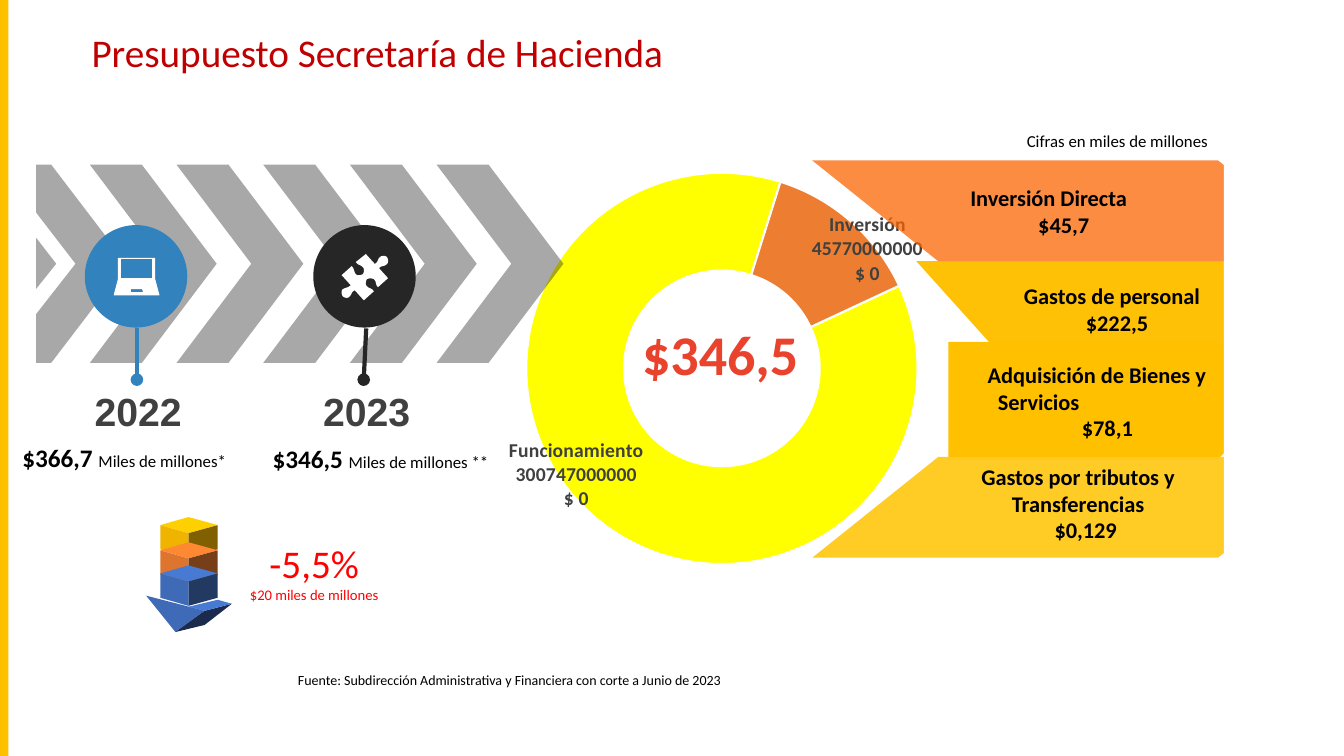
from dataclasses import dataclass

import pptx
import pptx.chart.data
import pptx.dml.color
import pptx.enum.chart
import pptx.enum.shapes
import pptx.enum.text
import pptx.oxml
import pptx.oxml.ns
import pptx.oxml.xmlchemy
import pptx.util

RGBColor = pptx.dml.color.RGBColor
Shapes = pptx.enum.shapes.MSO_SHAPE
Align = pptx.enum.text.PP_ALIGN
Anchor = pptx.enum.text.MSO_ANCHOR
qn = pptx.oxml.ns.qn
new_element = pptx.oxml.xmlchemy.OxmlElement

BLACK, WHITE = RGBColor(0, 0, 0), RGBColor(255, 255, 255)
CHARCOAL, GREY = RGBColor(0x26, 0x26, 0x26), RGBColor(0x40, 0x40, 0x40)
GOLD, LIGHT_GOLD = RGBColor(0xFF, 0xC0, 0), RGBColor(0xFF, 0xCA, 0x21)
ORANGE, VIVID_ORANGE = RGBColor(0xED, 0x7D, 0x31), RGBColor(0xFA, 0x65, 0)
YELLOW, BLUE = RGBColor(255, 255, 0), RGBColor(0x32, 0x82, 0xBE)
RED, DARK_RED, TOTAL_RED = RGBColor(255, 0, 0), RGBColor(0xC0, 0, 0), RGBColor(0xE9, 0x42, 0x2D)

# The slide is a grid of 160 columns by 90 rows; icons use hundredths of 12 cells
CELL = pptx.util.Inches(1) / 12
ICON_UNIT = CELL * 12 / 100

Point = tuple[float, float]


@dataclass
class Area:
    column: float
    row: float
    columns: float
    rows: float

    def emu(self) -> list[int]:
        return [round(n * CELL) for n in (self.column, self.row, self.columns, self.rows)]


@dataclass
class Span:
    text: str
    size: float
    bold: bool = False
    color: RGBColor = BLACK
    font: str = "Calibri"


@dataclass
class Line:
    spans: list[Span]
    align: Align = Align.CENTER
    margin: float = 0  # cells
    indent: float = 0  # cells


@dataclass
class Band:
    kind: Shapes
    area: Area
    color: RGBColor
    opacity: int
    adjust: float
    flipped: bool
    right_inset: float
    lines: list[Line]


@dataclass
class Year:
    name: str
    color: RGBColor
    circle_column: float
    stem: tuple[Point, Point]
    name_column: float
    amount_area: Area
    amount: str
    note: str


def paint(shape, color: RGBColor, opacity: int = 100) -> None:
    shape.shadow.inherit = False
    shape.fill.solid()
    shape.fill.fore_color.rgb = color
    shape.line.fill.background()
    if opacity < 100:
        alpha = new_element("a:alpha")
        alpha.set("val", str(opacity * 1000))
        shape._element.spPr.find(qn("a:solidFill")).find(qn("a:srgbClr")).append(alpha)


def write(frame, lines: list[Line], anchor: Anchor = Anchor.TOP) -> None:
    frame.word_wrap = True
    frame.vertical_anchor = anchor
    for number, line in enumerate(lines):
        para = frame.add_paragraph() if number else frame.paragraphs[0]
        para.alignment = line.align
        properties = para._p.get_or_add_pPr()
        properties.set("marL", str(round(line.margin * CELL)))
        properties.set("indent", str(round(line.indent * CELL)))
        for span in line.spans:
            run = para.add_run()
            run.text = span.text
            run.font.size = pptx.util.Pt(span.size)
            run.font.bold = span.bold
            run.font.name = span.font
            run.font.color.rgb = span.color


def add_text(page, area: Area, lines: list[Line], anchor: Anchor = Anchor.TOP) -> None:
    write(page.shapes.add_textbox(*area.emu()).text_frame, lines, anchor)


def add_preset(page, kind: Shapes, area: Area, color: RGBColor, opacity: int = 100):
    shape = page.shapes.add_shape(kind, *area.emu())
    paint(shape, color, opacity)
    return shape


def add_outline(page, contours: list[list[Point]], color: RGBColor,
                unit: float = ICON_UNIT, opacity: int = 100) -> None:
    scaled = [[(x * 100, y * 100) for x, y in contour] for contour in contours]
    builder = page.shapes.build_freeform(*scaled[0][0], scale=unit / 100)
    for number, contour in enumerate(scaled):
        if number:
            builder.move_to(*contour[0])
        builder.add_line_segments(contour[1:], close=True)
    paint(builder.convert_to_shape(), color, opacity)


def trace(start: Point, pieces: list[list[Point]]) -> list[Point]:
    """Turn straight pieces (1 point) and Bezier pieces (3 points) into one outline."""
    points = [start]
    for piece in pieces:
        if len(piece) == 1:
            points.append(piece[0])
            continue
        a, (b, c, d) = points[-1], piece
        for t in (0.2, 0.4, 0.6, 0.8, 1):
            s = 1 - t
            points.append(tuple(s**3 * a[i] + 3 * s * s * t * b[i] + 3 * s * t * t * c[i]
                                + t**3 * d[i] for i in (0, 1)))
    return points


def add_budget_chart(page) -> None:
    data = pptx.chart.data.CategoryChartData()
    data.categories = ["Funcionamiento", "Inversión"]
    data.add_series("Series 1", [300747000000, 45770000000])
    chart = page.shapes.add_chart(pptx.enum.chart.XL_CHART_TYPE.DOUGHNUT,
                                  *Area(53.6, 17.9, 64.7, 53).emu(), data).chart
    chart.has_legend = chart.has_title = False
    chart.font.name, chart.font.size = "Calibri", pptx.util.Pt(10)
    chart.font.color.rgb = BLACK
    plot = chart.plots[0]
    plot.vary_by_categories = True
    plot._element.find(qn("c:firstSliceAng")).set("val", "65")
    plot._element.find(qn("c:holeSize")).set("val", "50")
    series = plot.series[0]
    for number, color in enumerate((YELLOW, ORANGE)):
        look = series.points[number].format
        look.fill.solid()
        look.fill.fore_color.rgb = color
        look.line.color.rgb = WHITE
        look.line.width = pptx.util.Pt(1.5)

    # Slice labels, moved from their default places
    style = ('<c:numFmt formatCode="&quot;$&quot;\\ #,##0,," sourceLinked="0"/><c:txPr><a:bodyPr/><a:p><a:pPr>'
             f'<a:defRPr sz="1400" b="1"><a:solidFill><a:srgbClr val="{GREY}"/></a:solidFill>'
             '<a:latin typeface="Calibri"/></a:defRPr></a:pPr><a:endParaRPr lang="es-CO"/></a:p></c:txPr>'
             '<c:showLegendKey val="0"/><c:showVal val="1"/><c:showCatName val="1"/><c:showSerName val="0"/>'
             '<c:showPercent val="1"/><c:showBubbleSize val="0"/><c:separator>\n</c:separator>')
    labels = "".join(
        f'<c:dLbl><c:idx val="{n}"/><c:layout><c:manualLayout><c:x val="{x}"/><c:y val="{y}"/>'
        f'</c:manualLayout></c:layout>{style}</c:dLbl>'
        for n, (x, y) in enumerate([(-0.09, -0.01), (0.09, -0.02)]))
    namespaces = pptx.oxml.ns.nsdecls("c", "a")
    series._element.find(qn("c:cat")).addprevious(
        pptx.oxml.parse_xml(f"<c:dLbls {namespaces}>{labels}{style}</c:dLbls>"))
    plot_area = plot._element.getparent()
    for old in plot_area.findall(qn("c:layout")):
        plot_area.remove(old)
    plot_area.insert(0, pptx.oxml.parse_xml(
        f'<c:layout {namespaces}><c:manualLayout><c:layoutTarget val="inner"/><c:xMode val="edge"/>'
        '<c:yMode val="edge"/><c:x val="0.14"/><c:y val="0.05"/><c:w val="0.72"/><c:h val="0.88"/>'
        '</c:manualLayout></c:layout>'))


def add_band(page, band: Band) -> None:
    shape = add_preset(page, band.kind, band.area, band.color, band.opacity)
    shape.adjustments[0] = band.adjust
    if band.flipped:
        shape._element.spPr.find(qn("a:xfrm")).set("flipH", "1")
    shape.text_frame.margin_right = round(band.right_inset * CELL)
    write(shape.text_frame, band.lines, Anchor.MIDDLE)


def add_year(page, year: Year) -> None:
    add_preset(page, Shapes.OVAL, Area(year.circle_column, 26.8, 12.2, 12.2), year.color)
    ends = [round(n * CELL) for point in year.stem for n in point]
    stem = page.shapes.add_connector(pptx.enum.shapes.MSO_CONNECTOR.STRAIGHT, *ends)
    stem.line.color.rgb = year.color
    stem.line.width = pptx.util.Pt(3)
    head = new_element("a:headEnd")
    head.set("type", "oval")
    stem._element.spPr.find(qn("a:ln")).append(head)
    stem._element.spPr.append(new_element("a:effectLst"))
    add_text(page, Area(year.name_column, 45.5, 18.7, 6.8),
             [Line([Span(year.name, 28, True, GREY, "Arial")])])
    add_text(page, year.amount_area,
             [Line([Span(year.amount + " ", 18, True), Span(year.note, 12)])])


def add_falling_arrow(page) -> None:
    add_outline(page, [[(145, 591), (203, 606), (174, 627)]], RGBColor(0x3F, 0x6A, 0xB7))
    add_outline(page, [[(203, 606), (230, 599), (203, 620), (174, 627)]], RGBColor(0x1B, 0x2B, 0x4D))
    add_outline(page, [[(187, 602), (216, 595), (230, 599), (203, 606)]], RGBColor(0x47, 0x7A, 0xD2))
    blocks = [(521, "FFD000", "F0B400", "806000"), (546, "FF8833", "DE752E", "773F19"),
              (569, "477AD2", "3F6AB7", "223962")]
    for y, top, left, right in blocks:
        faces = [([(159, y), (187, y - 8), (216, y), (187, y + 8)], top),
                 ([(159, y), (187, y + 8), (187, y + 32), (159, y + 24)], left),
                 ([(187, y + 8), (216, y), (216, y + 24), (187, y + 32)], right)]
        for corners, color in faces:
            add_outline(page, [corners], RGBColor.from_string(color))


def bold_line(text: str, margin: float = 0) -> Line:
    return Line([Span(text, 16, True)], margin=margin)


BANDS = [
    Band(Shapes.PENTAGON, Area(112.9, 40.7, 39, 14.1), GOLD, 100, 0.5, False, 1.2,
         [Line([Span("Adquisición de Bienes y Servicios", 16, True)], Align.LEFT, 4.7, -1.2),
          bold_line("$78,1", 2.4)]),
    Band(Shapes.PARALLELOGRAM, Area(109.1, 31.1, 47.8, 11.4), GOLD, 98, 0.9, True, 2.4,
         [bold_line("Gastos de personal"), bold_line("$222,5", 1.2)]),
    Band(Shapes.PARALLELOGRAM, Area(96.7, 54.4, 63.3, 12), LIGHT_GOLD, 98, 1.25, False, 1.2, []),
    Band(Shapes.PARALLELOGRAM, Area(96.7, 19.1, 63.3, 12), VIVID_ORANGE, 74, 1.25, True, 8.2,
         [bold_line("Inversión Directa"), bold_line("$45,7", 3.6)]),
]
YEARS = [
    Year("2023", CHARCOAL, 37.3, ((43.3, 45.2), (43.6, 39.1)), 34.3,
         Area(30.5, 52.2, 29.6, 4.8), "$346,5", "Miles de millones **"),
    Year("2022", BLUE, 10.1, ((16.3, 45.2), (16.3, 39.1)), 7.1,
         Area(1.1, 52.1, 27.4, 4.8), "$366,7", "Miles de millones*"),
]
LAPTOP = [
    [(130, 287), (130, 290), (142, 290), (141, 287)],
    [(120, 257), (120, 276), (151, 276), (151, 257)],
    [(117, 256), (154, 256), (154, 277), (158, 292), (158, 293), (113, 293), (113, 292), (117, 277)],
]
PUZZLE = trace((384, 255), [
    [(385, 257), (386, 260), (384, 262)], [(381, 265), (379, 263), (376, 266)], [(385, 276)],
    [(375, 285)], [(372, 282), (374, 280), (371, 277)], [(369, 276), (366, 276), (364, 277)],
    [(363, 279), (362, 282), (364, 284)], [(367, 287), (368, 285), (371, 289)], [(361, 298)],
    [(352, 288)], [(348, 290), (350, 291), (347, 294)], [(345, 297), (341, 295), (340, 294)],
    [(339, 292), (338, 289), (340, 287)], [(343, 285), (345, 286), (348, 283)], [(339, 273)],
    [(349, 264)], [(352, 267), (351, 270), (353, 272)], [(355, 274), (358, 273), (360, 272)],
    [(361, 271), (362, 267), (360, 265)], [(357, 262), (356, 264), (353, 260)], [(363, 252)],
    [(372, 262)], [(376, 259), (374, 258), (377, 255)], [(379, 253), (383, 254), (384, 255)]])


def main() -> None:
    deck = pptx.Presentation()
    deck.slide_width, deck.slide_height = round(160 * CELL), round(90 * CELL)
    page = deck.slides.add_slide(deck.slide_layouts[5])

    # Side bar and title
    add_preset(page, Shapes.RECTANGLE, Area(0, 0, 1, 90), GOLD)
    title = page.shapes.title
    title.left, title.top, title.width, title.height = Area(9.7, 0.6, 112.5, 11.8).emu()
    write(title.text_frame, [Line([Span("Presupuesto Secretaría de Hacienda", 28, color=DARK_RED)],
                                  Align.LEFT)], Anchor.MIDDLE)
    title.text_frame.paragraphs[0].line_spacing = 0.9

    # Budget ring and its breakdown
    add_budget_chart(page)
    for band in BANDS:
        add_band(page, band)
    add_text(page, Area(34.3, 79.3, 87.8, 3.2), [Line([Span(
        "Fuente: Subdirección Administrativa y Financiera con corte a Junio de 2023", 10)], Align.LEFT)])
    add_text(page, Area(69.2, 37.4, 33.1, 9.2), [Line([Span("$346,5", 40, True, TOTAL_RED)])],
             Anchor.MIDDLE)
    add_preset(page, Shapes.RECTANGLE, Area(145.7, 18.6, 14.3, 50), WHITE)
    add_text(page, Area(110.6, 15, 34.4, 3.6),
             [Line([Span("Cifras en miles de millones", 12)], Align.RIGHT)])
    add_text(page, Area(112.1, 54.5, 32.5, 10.9),
             [bold_line("Gastos por tributos y Transferencias"), bold_line("$0,129", 1.8)])

    # Chevron track
    for number in range(5):
        chevron = add_preset(page, Shapes.CHEVRON, Area(10.7 + 10.32 * number, 19.6, 15.1, 23.6),
                             CHARCOAL, 40)
        chevron.adjustments[0] = 0.59
    cut_chevrons = [
        [(4.3, 19.6), (6.1, 19.6), (15.1, 31.4), (6.1, 43.2), (4.3, 43.2), (4.3, 37.4), (9, 31.4), (4.3, 25.3)],
        [(4.3, 28.3), (6.7, 31.4), (4.3, 34.4)]]
    for corners in cut_chevrons:
        add_outline(page, [corners], CHARCOAL, CELL, 40)

    # Years with their icons, and the change between them
    for year in YEARS:
        add_year(page, year)
    add_outline(page, LAPTOP, WHITE)
    add_outline(page, [PUZZLE], WHITE)
    add_falling_arrow(page)
    add_text(page, Area(27.5, 63.6, 19.8, 9),
             [Line([Span("-5,5%", 28, color=RED)]), Line([Span("$20 miles de millones", 10.5, color=RED)])])
    deck.save("out.pptx")


if __name__ == "__main__":
    main()
